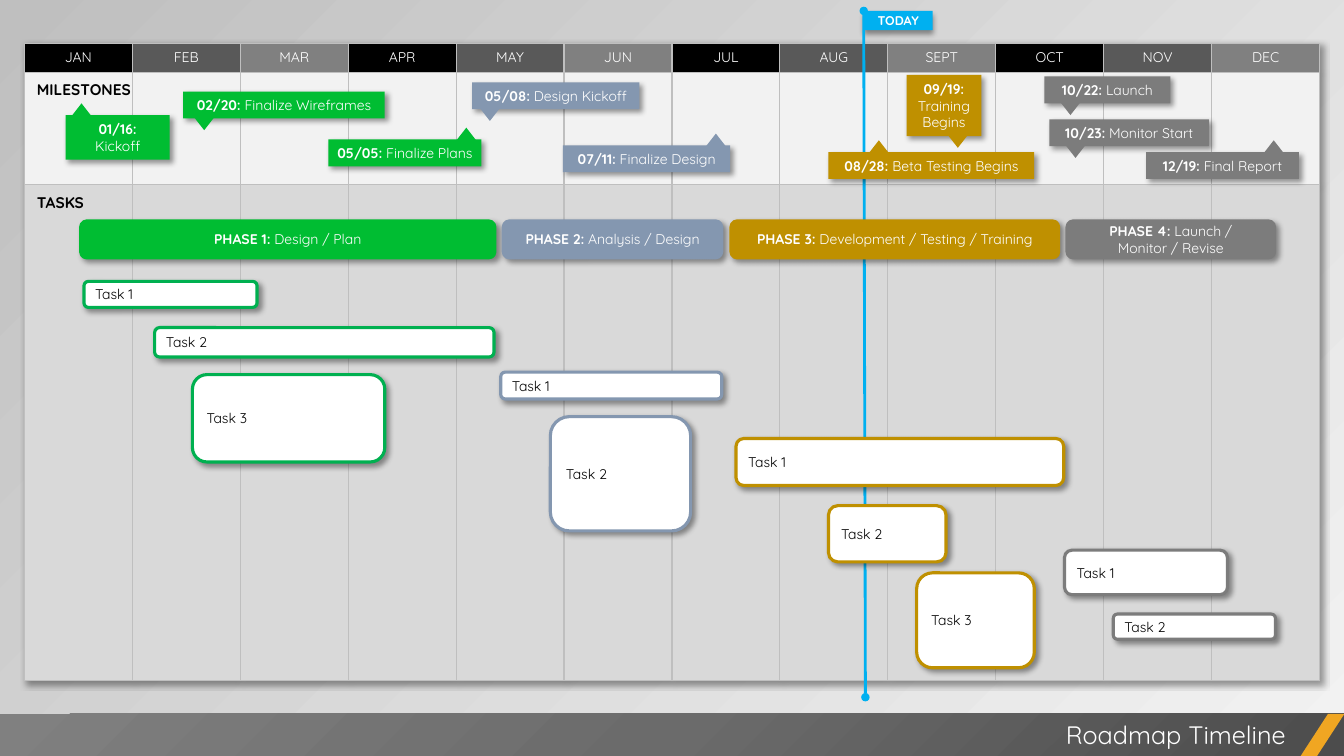
"""Build a one-slide roadmap timeline with months, milestones, phases and tasks."""
from pptx import Presentation
from pptx.dml.color import RGBColor
from pptx.enum.shapes import MSO_CONNECTOR, MSO_SHAPE
from pptx.enum.text import PP_ALIGN
from pptx.oxml import parse_xml
from pptx.oxml.ns import nsdecls, qn
from pptx.util import Inches, Pt

WHITE = RGBColor(0xFF, 0xFF, 0xFF)
BLACK = RGBColor(0x00, 0x00, 0x00)
DARK = RGBColor(0x59, 0x59, 0x59)
MID = RGBColor(0x80, 0x80, 0x80)
PALE = RGBColor(0xF2, 0xF2, 0xF2)
LIGHT = RGBColor(0xD9, 0xD9, 0xD9)
SILVER = RGBColor(0xBF, 0xBF, 0xBF)
GREEN = RGBColor(0x00, 0xBD, 0x32)
LEAF = RGBColor(0x00, 0xB0, 0x50)
BLUE = RGBColor(0x84, 0x97, 0xB0)
GOLD = RGBColor(0xBF, 0x90, 0x00)
GRAY = RGBColor(0x7C, 0x7C, 0x7C)
SKY = RGBColor(0x00, 0xB0, 0xF0)
AMBER = RGBColor(0xF0, 0xA6, 0x22)

SHADOW = (
    '<a:outerShdw %s blurRad="50800" dist="38100" dir="%d" algn="tl" rotWithShape="0">'
    '<a:srgbClr val="000000"><a:alpha val="40000"/></a:srgbClr></a:outerShdw>'
)

prs = Presentation()
prs.slide_width, prs.slide_height = Inches(13.33), Inches(7.5)
UNIT = prs.slide_height / 90
slide = prs.slides.add_slide(prs.slide_layouts[6])
shapes = slide.shapes


def write(tf, text, size=10, color=WHITE, bold=False, align=PP_ALIGN.CENTER):
    """Write lines of text; whatever ends with a colon is bold."""
    tf.word_wrap = True
    for i, line in enumerate(text.split("\n")):
        p = tf.add_paragraph() if i else tf.paragraphs[0]
        p.alignment = align
        head, colon, rest = line.partition(":")
        for part, strong in ((head + colon, bold or bool(colon)), (rest, bold)):
            if part:
                r = p.add_run()
                r.text = part
                r.font.name, r.font.size = "Quicksand", Pt(size)
                r.font.bold, r.font.color.rgb = strong, color


def box(kind, grid, fill, line=None, shadow=None):
    """Add a filled shape at grid units, with an optional outline and shadow angle."""
    s = shapes.add_shape(kind, *(round(v * UNIT) for v in grid))
    s.fill.solid()
    s.fill.fore_color.rgb = fill
    if line is None:
        s.line.fill.background()
    else:
        s.line.color.rgb, s.line.width = line, Pt(2.25)
    s.shadow.inherit = False
    if shadow is not None:
        effects = s._element.spPr.find(qn("a:effectLst"))
        effects.append(parse_xml(SHADOW % (nsdecls("a"), shadow * 60000)))
    return s


bg = slide.background.fill
bg.gradient()
bg.gradient_angle = 135
for stop, color in zip(bg.gradient_stops, (PALE, SILVER)):
    stop.color.rgb = color

footer = box(MSO_SHAPE.RECTANGLE, (0, 85, 160, 5), DARK)
spPr = footer._element.spPr
stops = "".join(
    f'<a:gs pos="{pos}"><a:srgbClr val="{color}"/></a:gs>'
    for pos, color in ((0, "4C4C4C"), (50000, "6B6B6B"), (100000, "808080"))
)
spPr.replace(spPr.find(qn("a:solidFill")), parse_xml(
    f'<a:gradFill {nsdecls("a")}><a:gsLst>{stops}</a:gsLst><a:path path="circle">'
    '<a:fillToRect l="100000" t="100000"/></a:path></a:gradFill>'))
slash = box(MSO_SHAPE.PARALLELOGRAM, (154.8, 85, 5.2, 5), AMBER)
slash.adjustments[0] = 0.65
title = shapes.add_textbox(*(round(v * UNIT) for v in (63, 85, 91.2, 4.8)))
write(title.text_frame, "Roadmap Timeline", size=18, align=PP_ALIGN.RIGHT)

MONTHS = "JAN FEB MAR APR MAY JUN JUL AUG SEPT OCT NOV DEC".split()
frame = shapes.add_table(3, 12, *(round(v * UNIT) for v in (2.9, 5.2, 154.2, 75.8)))
table = frame.table
table.first_row = table.horz_banding = False
effects = parse_xml(f'<a:effectLst {nsdecls("a")}/>')
effects.append(parse_xml(SHADOW % (nsdecls("a"), 45 * 60000)))
table._tbl.tblPr.insert(0, effects)
for row, height in zip(table.rows, (3.4, 13.4, 59)):
    row.height = round(height * UNIT)
for col, month in enumerate(MONTHS):
    table.columns[col].width = round(154.2 * UNIT / 12)
    write(table.cell(0, col).text_frame, month)
    for row, fill in enumerate(((BLACK, DARK, MID)[col % 3], PALE, LIGHT)):
        cell = table.cell(row, col)
        tcPr = cell._tc.get_or_add_tcPr()
        for side in "LRTB":
            tcPr.append(parse_xml(
                f'<a:ln{side} {nsdecls("a")} w="12700"><a:solidFill>'
                f'<a:srgbClr val="{SILVER}"/></a:solidFill></a:ln{side}>'))
        cell.fill.solid()
        cell.fill.fore_color.rgb = fill

flag = box(MSO_SHAPE.RECTANGLE, (102.8, 1.3, 8.2, 2.3), SKY, shadow=90)
write(flag.text_frame, "TODAY", size=9, bold=True)
today = shapes.add_connector(
    MSO_CONNECTOR.STRAIGHT, *(round(v * UNIT) for v in (102.8, 1.3, 103, 83)))
today.line.color.rgb, today.line.width = SKY, Pt(2)
for end in ("headEnd", "tailEnd"):
    today.line._get_or_add_ln().append(
        parse_xml(f'<a:{end} {nsdecls("a")} type="oval"/>'))
today._element.spPr.append(parse_xml(f'<a:effectLst {nsdecls("a")}/>'))

PHASES = [
    ("PHASE 1: Design / Plan", GREEN, 9.6, 49.3),
    ("PHASE 2: Analysis / Design", BLUE, 59.9, 26),
    ("PHASE 3: Development / Testing / Training", GOLD, 87, 39),
    ("PHASE 4: Launch / Monitor / Revise", GRAY, 127, 24.7),
]
for text, color, x, w in PHASES:
    s = box(MSO_SHAPE.ROUNDED_RECTANGLE, (x, 26.3, w, 4.4), color, color, 45)
    write(s.text_frame, text)

for text, y in (("MILESTONES", 9), ("TASKS", 22.4)):
    s = shapes.add_textbox(*(round(v * UNIT) for v in (3.2, y, 16, 3.5)))
    write(s.text_frame, text, size=11, color=BLACK, bold=True, align=PP_ALIGN.LEFT)

MILESTONES = [
    ("05/05: Finalize Plans", GREEN, (39.1, 16.6, 18.2, 3.2), 54.1, "up"),
    ("01/16:\nKickoff", GREEN, (7.8, 13.7, 12.4, 5.3), 8.3, "up"),
    ("02/20: Finalize Wireframes", GREEN, (21.8, 10.9, 24, 3.2), 22.9, "down"),
    ("05/08: Design Kickoff", BLUE, (56.2, 9.8, 19.9, 3.2), 56.9, "down"),
    ("07/11: Finalize Design", BLUE, (67, 17.3, 19.9, 3.2), 83.8, "up"),
    ("09/19: Training Begins", GOLD, (107.9, 8.9, 8.9, 7.3), 112.6, "down"),
    ("08/28: Beta Testing Begins", GOLD, (98.6, 18.1, 24.5, 3.2), 103.2, "up"),
    ("10/22: Launch", GRAY, (124.3, 9.1, 15, 3.2), 126, "down"),
    ("10/23: Monitor Start", GRAY, (124.9, 14.2, 19, 3.2), 126.6, "down"),
    ("12/19: Final Report", GRAY, (136.4, 18.1, 18.2, 3.2), 150.2, "up"),
]
for text, color, grid, tip_x, side in MILESTONES:
    s = box(MSO_SHAPE.RECTANGLE, grid, color, shadow=45)
    tf = s.text_frame
    tf.margin_left = tf.margin_right = tf.margin_top = tf.margin_bottom = Inches(0.05)
    write(tf, text)
    tip_y = grid[1] - 1.4 if side == "up" else grid[1] + grid[3] - 0.4
    tip = box(MSO_SHAPE.ISOSCELES_TRIANGLE, (tip_x, tip_y, 2.8, 1.8), color)
    tip.rotation = 0 if side == "up" else 180

TASKS = [
    ("Task 2", LEAF, (18.4, 39, 40.4, 3.5)),
    ("Task 2", BLUE, (65.5, 49.6, 16.7, 13.6)),
    ("Task 2", GOLD, (98.6, 60.2, 14, 6.7)),
    ("Task 2", GRAY, (132.5, 73.1, 19.3, 3)),
    ("Task 1", LEAF, (10, 33.5, 20.6, 3.1)),
    ("Task 1", BLUE, (59.6, 44.3, 26.3, 3.2)),
    ("Task 1", GOLD, (87.6, 52.2, 39, 5.6)),
    ("Task 1", GRAY, (126.7, 65.5, 19.4, 5.3)),
    ("Task 3", GOLD, (109.1, 68.2, 14, 11.3)),
    ("Task 3", LEAF, (22.9, 44.6, 22.9, 10.4)),
]
for text, color, grid in TASKS:
    s = box(MSO_SHAPE.ROUNDED_RECTANGLE, grid, WHITE, color, 45)
    write(s.text_frame, text, color=BLACK, align=PP_ALIGN.LEFT)

prs.save("out.pptx")
